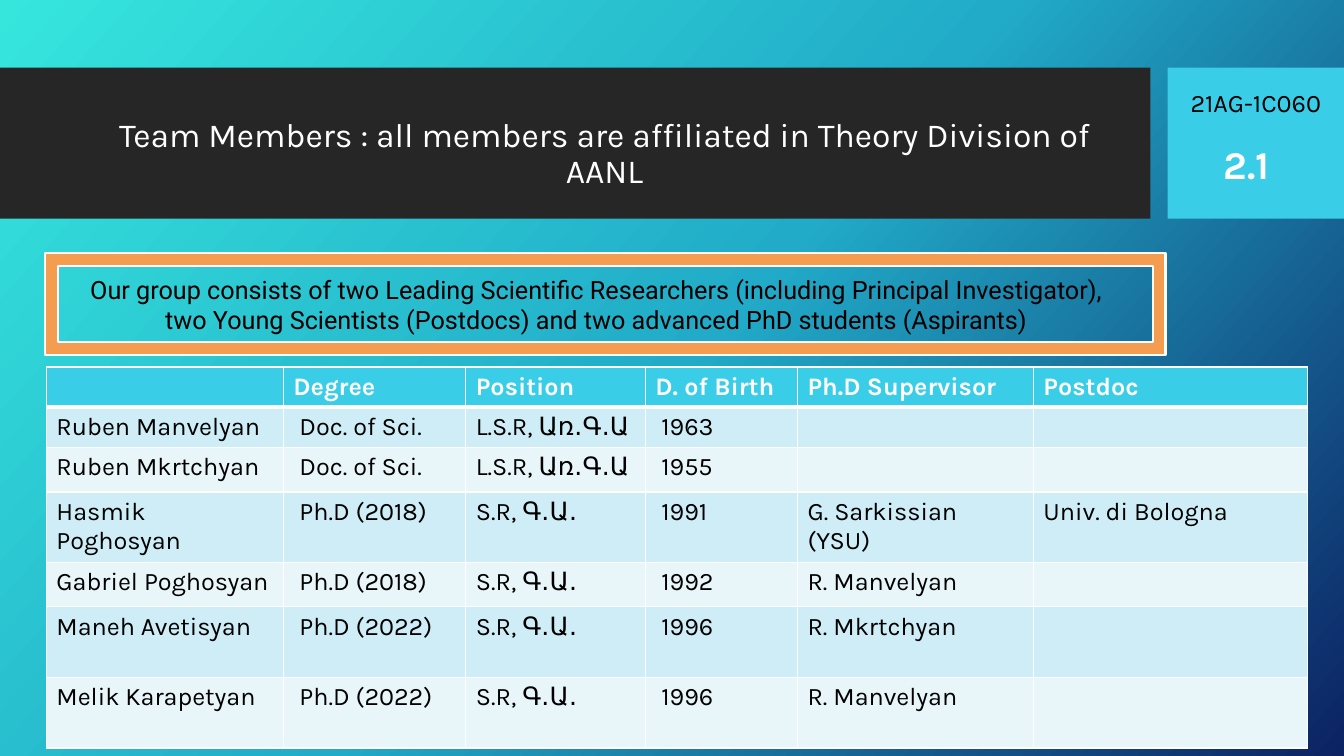
from copy import deepcopy

from lxml import etree
from pptx import Presentation
from pptx.dml.color import RGBColor
from pptx.enum.shapes import MSO_SHAPE
from pptx.enum.text import MSO_ANCHOR, PP_ALIGN
from pptx.oxml.ns import qn
from pptx.util import Inches, Pt

RECT, FRAME = MSO_SHAPE.RECTANGLE, MSO_SHAPE.FRAME
LEFT, CENTER = PP_ALIGN.LEFT, PP_ALIGN.CENTER
TOP, MIDDLE = MSO_ANCHOR.TOP, MSO_ANCHOR.MIDDLE

WHITE = RGBColor(0xFF, 0xFF, 0xFF)
BLACK = RGBColor(0, 0, 0)
CHARCOAL = RGBColor(0x26, 0x26, 0x26)
CYAN = RGBColor(0x39, 0xCD, 0xE7)
ORANGE = RGBColor(0xF4, 0x9D, 0x50)
BANDS = (RGBColor(0xCE, 0xED, 0xF6), RGBColor(0xE8, 0xF6, 0xFA))
GRADIENT = (
    (0, RGBColor(0x36, 0xE6, 0xDD)),
    (0.5, RGBColor(0x21, 0xAB, 0xC8)),
    (1, RGBColor(0x0C, 0x22, 0x63)),
)
GRADIENT_ANGLE = 318

SLIDE_W, SLIDE_H = 13.33, 7.5
BAND_TOP, BAND_H = 0.67, 1.5
TITLE_BAND_W, CODE_LEFT = 11.41, 11.58

TITLE = "Team Members : all members are affiliated in Theory Division of AANL"
GROUP = ("Our group consists of two Leading Scientific Researchers "
         "(including Principal Investigator), two Young Scientists (Postdocs) "
         "and two advanced PhD students (Aspirants)")

SHAPES = (
    (RECT, (0, BAND_TOP, TITLE_BAND_W, BAND_H), CHARCOAL, None),
    (RECT, (CODE_LEFT, BAND_TOP, SLIDE_W - CODE_LEFT, BAND_H), CYAN, None),
    (FRAME, (0.45, 2.51, 11.11, 1.01), ORANGE, WHITE),
)
TEXTS = (
    (TITLE, (0.74, 0.82, 10.51, 1.18), "Karla", 24, WHITE, False, CENTER, MIDDLE, 0.9, 0.3),
    ("21AG-1C060", (11.71, 0.82, 1.59, 0.4), "Karla", 18, BLACK, False, LEFT, TOP, 1, 0.05),
    ("2.1", (12.04, 1.34, 0.93, 0.57), "Karla", 28, WHITE, True, LEFT, TOP, 1, 0.05),
    (GROUP, (0.74, 2.67, 10.35, 0.71), "Roboto", 18, BLACK, False, CENTER, TOP, 1, 0.05),
)

TABLE_LEFT, TABLE_TOP = 0.46, 3.64
COLUMNS = (2.35, 1.81, 1.78, 1.51, 2.34, 2.72)
ROWS = (0.4, 0.4, 0.44, 0.7, 0.44, 0.7, 0.7)
INDENTED_COLUMNS = (1, 3)
MEMBERS = (
    ("", "Degree", "Position", "D. of Birth", "Ph.D Supervisor", "Postdoc"),
    ("Ruben Manvelyan", "Doc. of Sci.", "L.S.R, Առ․Գ․Ա", "1963", "", ""),
    ("Ruben Mkrtchyan", "Doc. of Sci.", "L.S.R, Առ․Գ․Ա", "1955", "", ""),
    ("Hasmik\vPoghosyan", "Ph.D (2018)", "S.R, Գ․Ա․", "1991", "G. Sarkissian (YSU)",
     "Univ. di Bologna"),
    ("Gabriel Poghosyan", "Ph.D (2018)", "S.R, Գ․Ա․", "1992", "R. Manvelyan", ""),
    ("Maneh Avetisyan", "Ph.D (2022)", "S.R, Գ․Ա․", "1996", "R. Mkrtchyan", ""),
    ("Melik Karapetyan", "Ph.D (2022)", "S.R, Գ․Ա․", "1996", "R. Manvelyan", ""),
)


def style_runs(p, name, size, color, bold):
    for r in p.runs:
        r.font.name = name
        r.font.size = Pt(size)
        r.font.bold = bold
        r.font.color.rgb = color


def paint_background(slide):
    fill = slide.background.fill
    fill.gradient()
    fill.gradient_angle = GRADIENT_ANGLE
    first = slide.background._cSld.find(".//" + qn("a:gs"))
    first.addnext(deepcopy(first))
    for stop, (position, color) in zip(fill.gradient_stops, GRADIENT):
        stop.position = position
        stop.color.rgb = color


def add_panel(slide, kind, box, color, line):
    sp = slide.shapes.add_shape(kind, *map(Inches, box))
    sp.shadow.inherit = False
    sp.fill.solid()
    sp.fill.fore_color.rgb = color
    if line is None:
        sp.line.fill.background()
    else:
        sp.line.color.rgb = line
        sp.line.width = Pt(1.5)


def add_text(slide, text, box, name, size, color, bold, align, anchor, spacing, inset):
    tf = slide.shapes.add_textbox(*map(Inches, box)).text_frame
    tf.word_wrap = True
    tf.vertical_anchor = anchor
    tf.margin_top = Inches(inset)
    tf.text = text
    p = tf.paragraphs[0]
    p.alignment = align
    p.line_spacing = spacing
    style_runs(p, name, size, color, bold)


def set_borders(cell, row):
    tcPr = cell._tc.get_or_add_tcPr()
    widths = {"L": 1, "R": 1, "T": 3 if row == 1 else 1, "B": 3 if row == 0 else 1}
    for side, width in widths.items():
        ln = etree.SubElement(tcPr, qn(f"a:ln{side}"), w=str(Pt(width)))
        solid = etree.SubElement(ln, qn("a:solidFill"))
        etree.SubElement(solid, qn("a:srgbClr"), val=str(WHITE))


def add_members(slide):
    box = (TABLE_LEFT, TABLE_TOP, sum(COLUMNS), sum(ROWS))
    table = slide.shapes.add_table(len(ROWS), len(COLUMNS), *map(Inches, box)).table
    for column, width in zip(table.columns, COLUMNS):
        column.width = Inches(width)
    for i, (height, values) in enumerate(zip(ROWS, MEMBERS)):
        table.rows[i].height = Inches(height)
        header = i == 0
        for j, value in enumerate(values):
            cell = table.cell(i, j)
            set_borders(cell, i)
            cell.fill.solid()
            cell.fill.fore_color.rgb = CYAN if header else BANDS[(i - 1) % 2]
            if j in INDENTED_COLUMNS and not header:
                cell.margin_left = Inches(0.16)
            cell.text_frame.text = value
            style_runs(cell.text_frame.paragraphs[0], "Karla", 18,
                       WHITE if header else BLACK, header)


def main():
    """Build the team members slide."""
    prs = Presentation()
    prs.slide_width, prs.slide_height = Inches(SLIDE_W), Inches(SLIDE_H)
    slide = prs.slides.add_slide(prs.slide_layouts[6])
    paint_background(slide)
    for panel in SHAPES:
        add_panel(slide, *panel)
    for text in TEXTS:
        add_text(slide, *text)
    add_members(slide)
    prs.save("out.pptx")


if __name__ == "__main__":
    main()
